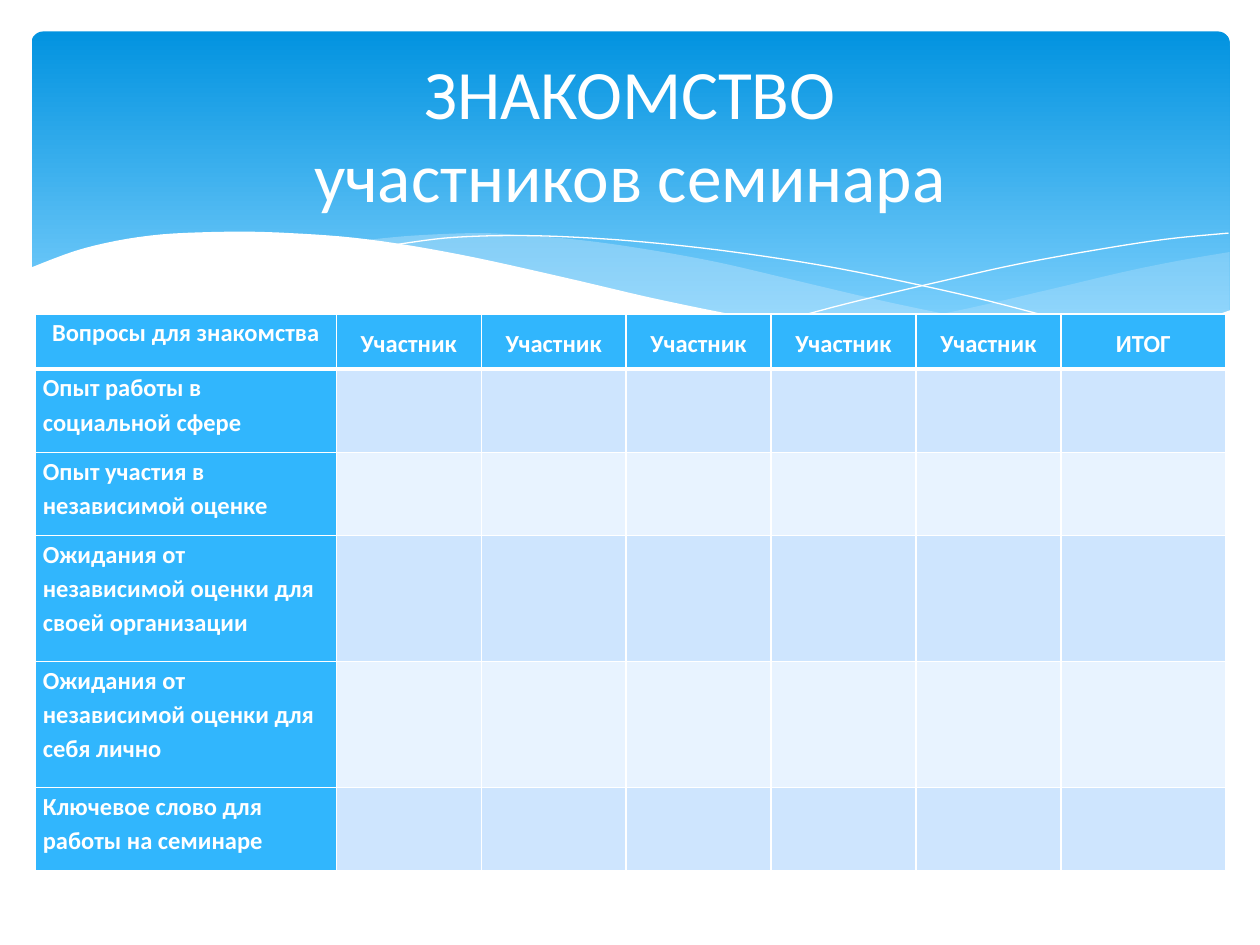
from dataclasses import dataclass

from lxml import etree
from pptx import Presentation
from pptx.dml.color import RGBColor
from pptx.enum.shapes import MSO_SHAPE
from pptx.enum.text import MSO_ANCHOR, MSO_AUTO_SIZE, PP_ALIGN
from pptx.oxml.ns import qn
from pptx.util import Emu, Inches, Pt

ROUNDED = MSO_SHAPE.ROUNDED_RECTANGLE
MIDDLE, TOP = MSO_ANCHOR.MIDDLE, MSO_ANCHOR.TOP
CENTER, LEFT = PP_ALIGN.CENTER, PP_ALIGN.LEFT
NO_AUTOFIT = MSO_AUTO_SIZE.NONE

COLUMNS, ROWS = 10, 7.5  # the slide is a grid of square cells
CELL = Inches(1)
FONT = "Calibri"
WHITE, ACCENT, MIST = "FFFFFF", "31B6FD", "C6E7FC"
BANDS = ("CEE5FE", "E8F3FF")
SPLINE_STEPS = 6

Point = tuple[float, float]

HEADERS = ["Вопросы для знакомства"] + ["Участник"] * 5 + ["ИТОГ"]
QUESTIONS = [
    "Опыт работы в социальной сфере",
    "Опыт участия в независимой оценке",
    "Ожидания от независимой оценки для своей организации",
    "Ожидания от независимой оценки для себя лично",
    "Ключевое слово для работы на семинаре",
]
COLUMN_WIDTHS = [2.39] + [1.15] * 5 + [1.31]
ROW_HEIGHTS = [0.44, 0.66, 0.66, 1, 1, 0.66]


@dataclass(frozen=True)
class Wave:
    """Smooth edges joined by straight lines; filled, or only outlined."""
    edges: list[list[Point]]
    color: str = WHITE
    opacity: int = 100
    filled: bool = True


WAVES = [
    Wave([[(9.76, 2), (9.35, 2.07), (8.91, 2.16), (8.32, 2.3), (7.53, 2.48),
           (6.61, 2.65)],
          [(6.61, 2.65), (7.19, 2.72), (7.69, 2.77), (8.14, 2.78), (8.54, 2.76),
           (8.97, 2.7), (9.35, 2.62), (9.76, 2.47)]], MIST, 29),
    Wave([[(8.93, 2.73), (8.37, 2.65), (7.75, 2.54), (7.06, 2.4), (6.29, 2.22),
           (5.69, 2.08), (5.14, 1.98), (4.65, 1.91), (4.2, 1.87), (3.8, 1.85),
           (3.28, 1.87), (2.86, 1.91)],
          [(2.86, 1.91), (3.42, 1.99), (4.04, 2.11), (4.91, 2.32), (5.66, 2.48),
           (6.34, 2.61), (6.95, 2.7), (7.48, 2.76), (7.96, 2.78), (8.48, 2.77),
           (8.93, 2.73)]], MIST, 40),
    Wave([[(3.09, 1.95), (3.53, 1.89), (4.01, 1.87), (4.5, 1.88), (5.1, 1.92),
           (5.82, 2), (6.65, 2.13), (7.6, 2.33), (8.31, 2.51), (9.07, 2.72)]],
         filled=False),
    Wave([[(6.13, 2.57), (6.72, 2.41), (7.48, 2.23), (8.06, 2.1), (8.66, 1.99),
           (9.24, 1.9), (9.75, 1.85)]], filled=False),
    Wave([[(9.77, 2.46), (9.2, 2.65), (8.5, 2.75), (7.78, 2.76), (7.08, 2.7),
           (6.26, 2.58), (5.29, 2.39), (4.47, 2.2), (3.65, 2.02), (2.92, 1.9),
           (2.3, 1.85), (1.77, 1.84), (1.19, 1.87), (0.67, 1.97), (0.23, 2.13)],
          [(0.23, 3.29), (9.77, 3.29)]]),
]


def grid(cells: float) -> Emu:
    return Emu(round(cells * CELL))


def rgb(value: str) -> RGBColor:
    return RGBColor.from_string(value)


def smooth(knots: list[Point]) -> list[Point]:
    """Catmull-Rom curve through the knots; two knots stay a straight line."""
    if len(knots) < 3:
        return knots
    padded = [knots[0], *knots, knots[-1]]
    curve = [knots[0]]
    for a, b, c, d in zip(padded, padded[1:], padded[2:], padded[3:]):
        for step in range(1, SPLINE_STEPS + 1):
            t = step / SPLINE_STEPS
            curve.append(tuple(
                q + t / 2 * (r - p + t * (2 * p - 5 * q + 4 * r - s
                                         + t * (3 * (q - r) + s - p)))
                for p, q, r, s in zip(a, b, c, d)))
    return curve


def draw_panel(slide) -> None:
    panel = slide.shapes.add_shape(ROUNDED, grid(0.25), grid(0.25),
                                   grid(9.51), grid(2.7))
    panel.adjustments[0] = 0.034
    panel.shadow.inherit = False
    panel.line.fill.background()
    panel.fill.gradient()
    panel.fill.gradient_angle = 270
    stops = ((0, "0293E0"), (0.9, "83D3FE"))
    for stop, (position, color) in zip(panel.fill.gradient_stops, stops):
        stop.position = position
        stop.color.rgb = rgb(color)


def draw_wave(slide, wave: Wave) -> None:
    points = [(grid(x), grid(y)) for edge in wave.edges for x, y in smooth(edge)]
    builder = slide.shapes.build_freeform(*points[0])
    builder.add_line_segments(points[1:], close=wave.filled)
    shape = builder.convert_to_shape()
    shape.shadow.inherit = False
    if not wave.filled:
        shape.fill.background()
        shape.line.color.rgb = rgb(wave.color)
        shape.line.width = Pt(0)
        return
    shape.line.fill.background()
    shape.fill.solid()
    shape.fill.fore_color.rgb = rgb(wave.color)
    if wave.opacity < 100:
        color = next(shape.element.iter(qn("a:srgbClr")))
        etree.SubElement(color, qn("a:alpha"), val=str(wave.opacity * 1000))


def set_borders(cell, widths: dict[str, float]) -> None:
    properties = cell._tc.get_or_add_tcPr()
    for index, (side, width) in enumerate(widths.items()):
        line = etree.Element(qn(f"a:ln{side}"), w=str(Pt(width)))
        fill = etree.SubElement(line, qn("a:solidFill"))
        etree.SubElement(fill, qn("a:srgbClr"), val=WHITE)
        properties.insert(index, line)


def write_cell(cell, text: str, align, anchor) -> None:
    cell.margin_left = cell.margin_right = grid(0.06)
    cell.margin_top = cell.margin_bottom = 0
    cell.vertical_anchor = anchor
    para = cell.text_frame.paragraphs[0]
    para.alignment = align
    para.line_spacing = 1.15
    span = para.add_run()
    span.text = text
    span.font.name, span.font.size, span.font.bold = FONT, Pt(14), True
    span.font.color.rgb = rgb(WHITE)


def draw_table(slide) -> None:
    table = slide.shapes.add_table(
        len(ROW_HEIGHTS), len(COLUMN_WIDTHS), grid(0.28), grid(2.49),
        grid(sum(COLUMN_WIDTHS)), grid(sum(ROW_HEIGHTS))).table
    table.horz_banding = False
    for column, width in zip(table.columns, COLUMN_WIDTHS):
        column.width = grid(width)
    for row_index, (row, height) in enumerate(zip(table.rows, ROW_HEIGHTS)):
        row.height = grid(height)
        for column_index, cell in enumerate(row.cells):
            heading = row_index == 0 or column_index == 0
            cell.fill.solid()
            cell.fill.fore_color.rgb = rgb(
                ACCENT if heading else BANDS[(row_index - 1) % 2])
            set_borders(cell, {"L": 1, "R": 1, "T": 3 if row_index == 1 else 1,
                               "B": 3 if row_index == 0 else 1})
            if row_index == 0:
                write_cell(cell, HEADERS[column_index], CENTER,
                           MIDDLE if column_index else TOP)
            elif column_index == 0:
                write_cell(cell, QUESTIONS[row_index - 1], LEFT, TOP)


def write_title(slide) -> None:
    title = slide.shapes.title
    title.left, title.top = grid(0.5), grid(0.37)
    title.width, title.height = grid(9), grid(1.37)
    frame = title.text_frame
    frame.auto_size = NO_AUTOFIT
    frame.vertical_anchor = MIDDLE
    para = frame.paragraphs[0]
    para.alignment = CENTER
    for index, text in enumerate(("ЗНАКОМСТВО", "участников семинара")):
        if index:
            para.add_line_break()
        span = para.add_run()
        span.text = text
        span.font.name, span.font.size = FONT, Pt(39.6)
        span.font.color.rgb = rgb(WHITE)
    slide.shapes.element.append(title.element)  # bring to front


def main() -> None:
    deck = Presentation()
    deck.slide_width, deck.slide_height = grid(COLUMNS), grid(ROWS)
    slide = deck.slides.add_slide(deck.slide_layouts[5])
    draw_panel(slide)
    for wave in WAVES:
        draw_wave(slide, wave)
    draw_table(slide)
    write_title(slide)
    deck.save("out.pptx")


if __name__ == "__main__":
    main()
